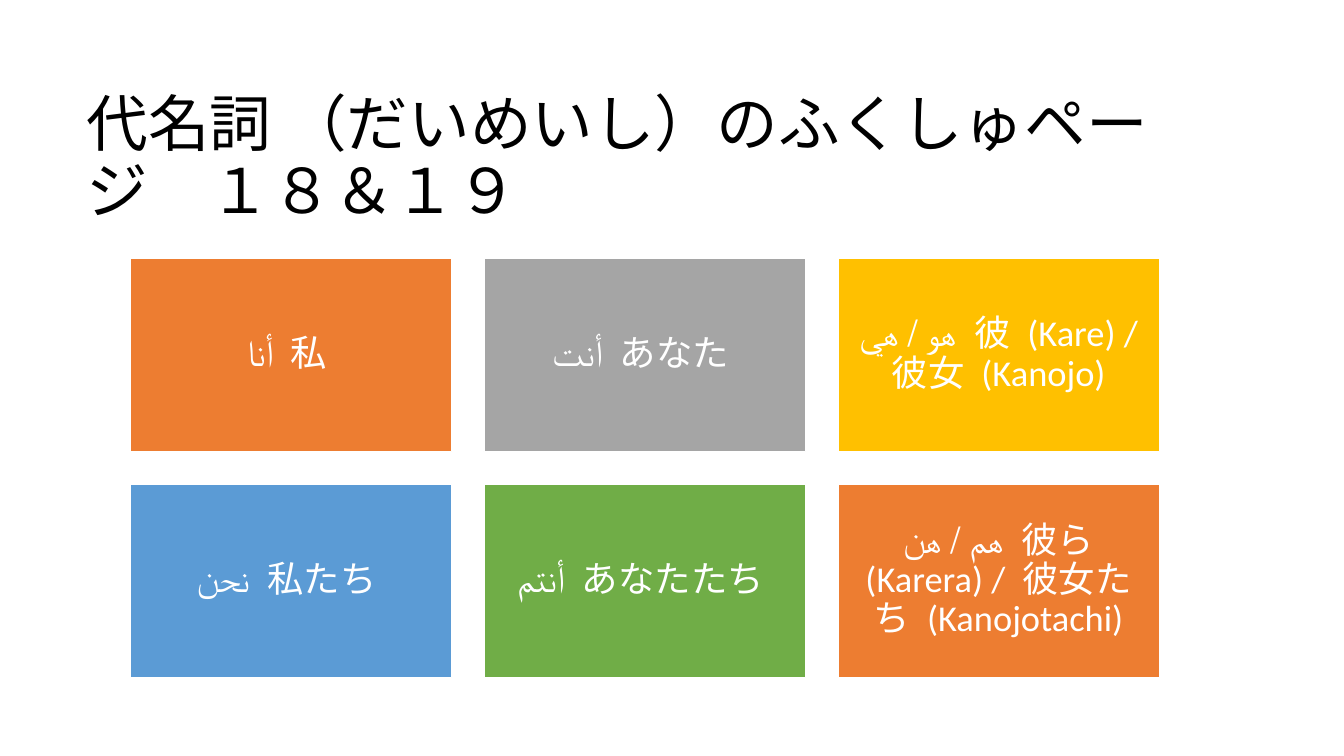
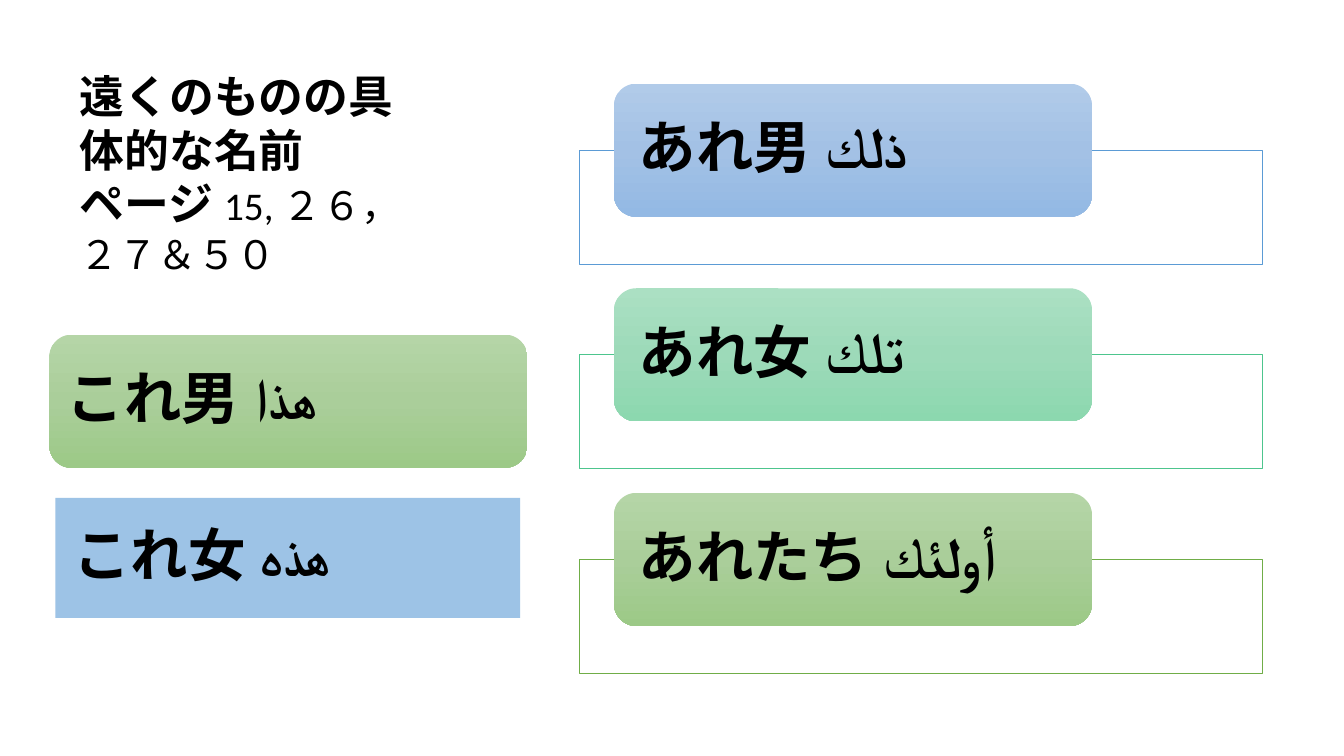
"""Build two review slides on Arabic pronouns and demonstratives."""
from copy import deepcopy

from lxml.etree import SubElement
from pptx import Presentation
from pptx.dml.color import RGBColor
from pptx.enum.lang import MSO_LANGUAGE_ID as Language
from pptx.enum.shapes import MSO_SHAPE as Shape
from pptx.enum.text import MSO_ANCHOR as Anchor, MSO_AUTO_SIZE as AutoSize, PP_ALIGN as Align
from pptx.oxml.ns import qn
from pptx.util import Pt

PX = 9144
FONT = "Calibri"
COLORS = {
    "black": "000000", "white": "FFFFFF", "orange": "ED7D31", "gray": "A5A5A5",
    "gold": "FFC000", "blue": "5B9BD5", "green": "70AD47", "mint": "4DC58D",
    "light_blue": "9DC3E6",
}
GRADIENTS = {
    "blue": ("B1CBE9", "A3C1E5", "93B9E4"),
    "mint": ("ABE0C3", "9DDAB9", "8CD8AF"),
    "green": ("B5D5A7", "AACE9A", "9CC987"),
}
PRONOUNS = [
    ("أنا 私 ", "orange"),
    ("أنت あなた ", "gray"),
    ("هو / هي 彼 (Kare) / 彼女 (Kanojo)", "gold"),
    ("نحن 私たち ", "blue"),
    ("أنتم あなたたち ", "green"),
    ("هم / هن 彼ら (Karera) / 彼女たち (Kanojotachi)", "orange"),
]
FAR_WORDS = [("あれ男ذلك", "blue"), ("あれ女تلك", "mint"), ("あれたちأولئك", "green")]
LABEL_SIZE = (474, 132)


def rgb(name):
    return RGBColor.from_string(COLORS[name])


def write_text(shape, paragraphs, size, color="black", bold=False, anchor=Anchor.MIDDLE,
               align=Align.LEFT, insets=(0, 0), spacing=0.9):
    """Fill a shape with paragraphs, each a list of (text, format overrides)."""
    frame = shape.text_frame
    frame.word_wrap = True
    frame.auto_size = AutoSize.NONE
    frame.vertical_anchor = anchor
    frame.margin_left = frame.margin_right = insets[0] * PX
    frame.margin_top = frame.margin_bottom = insets[1] * PX
    for index, runs in enumerate(paragraphs):
        paragraph = frame.add_paragraph() if index else frame.paragraphs[0]
        paragraph.alignment = align
        paragraph.line_spacing = spacing
        for text, changes in runs:
            run = paragraph.add_run()
            run.text = text
            run.font.name = FONT
            run.font.language_id = Language.JAPANESE
            run.font.size = Pt(changes.get("size", size))
            run.font.bold = changes.get("bold", bold)
            run.font.color.rgb = rgb(color)


def add_title_slide(presentation, box, paragraphs, size, **text_format):
    slide = presentation.slides.add_slide(presentation.slide_layouts.get_by_name("Title Only"))
    title = slide.shapes.title
    title.left, title.top, title.width, title.height = (value * PX for value in box)
    write_text(title, paragraphs, size, **text_format)
    return slide


def add_box(slide, box, fill=None, line=None, line_width=1, kind=Shape.RECTANGLE):
    shape = slide.shapes.add_shape(kind, *(value * PX for value in box))
    shape.shadow.inherit = False
    if fill:
        shape.fill.solid()
        shape.fill.fore_color.rgb = rgb(fill)
    if line:
        shape.line.color.rgb = rgb(line)
        shape.line.width = Pt(line_width)
    else:
        shape.line.fill.background()
    return shape


def add_gradient(shape, colors):
    """Apply a three-stop gradient that runs from top to bottom."""
    shape.fill.gradient()
    shape.fill.gradient_angle = 270
    stop_list = shape.fill._fill._gradFill.find(qn("a:gsLst"))
    stop_list.insert(1, deepcopy(stop_list[0]))
    for stop, position, color in zip(shape.fill.gradient_stops, (0, 0.5, 1), colors):
        stop.position = position
        stop.color.rgb = RGBColor.from_string(color)


def write_word(shape, word, inset=18):
    write_text(shape, [[(word, {})]], 41, bold=True, insets=(inset, 0))


def add_label(slide, left, top, word, theme, inset=18):
    label = add_box(slide, (left, top, *LABEL_SIZE), kind=Shape.ROUNDED_RECTANGLE)
    add_gradient(label, GRADIENTS[theme])
    write_word(label, word, inset)


def add_frame(slide, left, top, line):
    frame = add_box(slide, (left, top, 677, 113), "white", line, 0.5)
    color = frame.fill._xPr.find(qn("a:solidFill"))[0]
    SubElement(color, qn("a:alpha"), val="90000")


def build_pronouns(presentation):
    slide = add_title_slide(
        presentation, (76, 79, 1129, 151),
        [[("代名詞 （だいめいし）のふくしゅページ　１８＆１９", {})]], 44,
        anchor=Anchor.BOTTOM, insets=(10, 5))
    for index, (text, color) in enumerate(PRONOUNS):
        row, column = divmod(index, 3)
        card = add_box(slide, (129 + column * 351, 256 + row * 224, 319, 192), color, "white")
        write_text(card, [[(text, {})]], 26, "white", align=Align.CENTER, insets=(11, 11))


def build_demonstratives(presentation):
    slide = add_title_slide(
        presentation, (79, 68, 340, 603),
        [[("遠くのものの具体的な名前", {})],
         [("ページ", {}), ("15,２６，２７＆５０", {"size": 28, "bold": False})]],
        32, bold=True, anchor=Anchor.TOP, spacing=1.0)
    for index, (word, theme) in enumerate(FAR_WORDS):
        top = 83 + index * 203
        add_frame(slide, 575, top + 66, theme)
        add_label(slide, 609, top, word, theme)
    add_label(slide, 49, 332, "これ男هذا", "green", inset=11)
    write_word(add_box(slide, (55, 494, 461, 119), "light_blue"), "これ女هذه")


def main():
    presentation = Presentation()
    presentation.slide_width, presentation.slide_height = 1333 * PX, 750 * PX
    build_pronouns(presentation)
    build_demonstratives(presentation)
    presentation.save("out.pptx")


if __name__ == "__main__":
    main()
